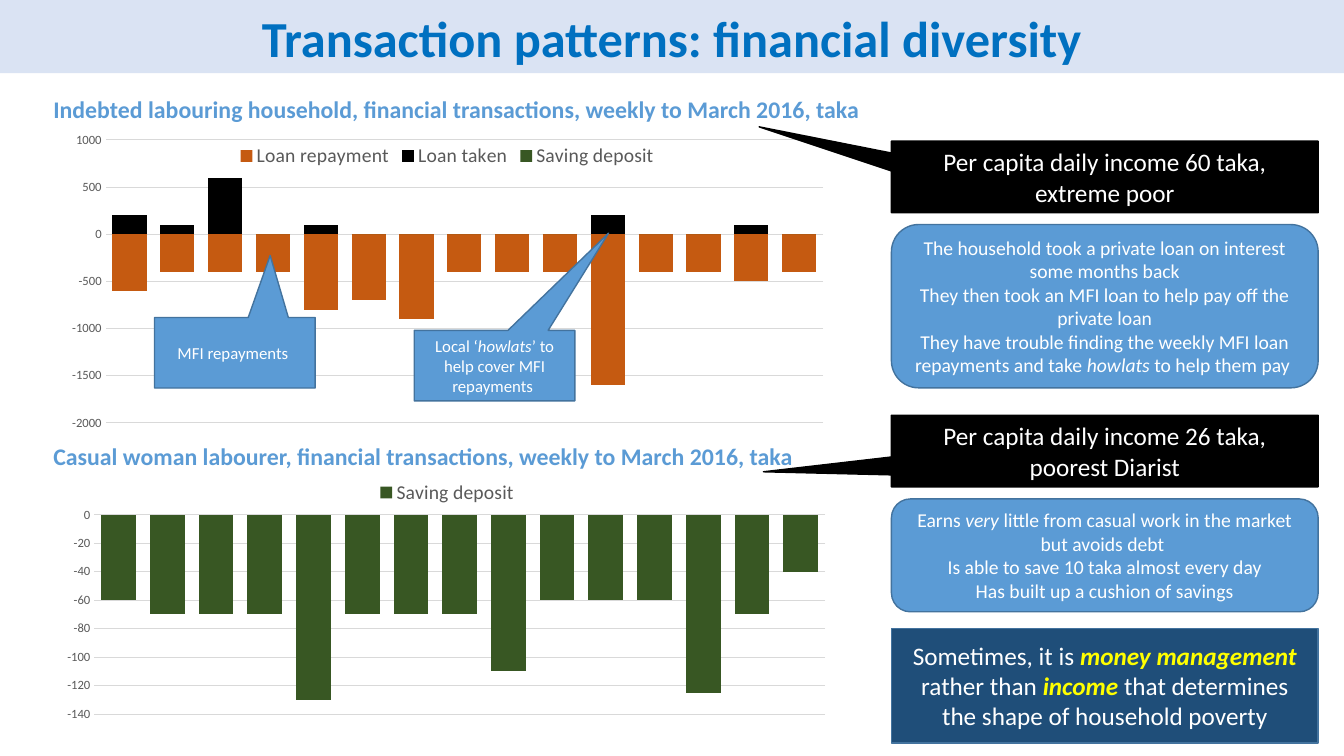
from dataclasses import dataclass
from typing import Optional

from pptx import Presentation
from pptx.chart.chart import Chart
from pptx.chart.data import CategoryChartData
from pptx.dml.color import RGBColor
from pptx.enum.chart import XL_CHART_TYPE, XL_LEGEND_POSITION, XL_TICK_MARK
from pptx.enum.shapes import MSO_SHAPE
from pptx.enum.text import MSO_ANCHOR, PP_ALIGN
from pptx.oxml import parse_xml
from pptx.oxml.ns import nsdecls
from pptx.slide import Slide
from pptx.text.text import TextFrame
from pptx.util import Inches, Pt

WIDE, HIGH = Inches(13.33), Inches(7.5)
COL, ROW = WIDE / 100, HIGH / 100


@dataclass(frozen=True)
class Theme:
    font: str = "Calibri"
    band: str = "DAE3F3"
    title: str = "0070C0"
    blue: str = "5B9BD5"
    edge: str = "43739E"
    navy: str = "1F4E79"
    black: str = "000000"
    white: str = "FFFFFF"
    mark: str = "FFFF00"
    grey: str = "595959"
    grid: str = "D9D9D9"
    rust: str = "C55A11"
    green: str = "385723"
    huge: int = 36
    large: int = 18
    head: int = 17
    body: int = 14
    small: int = 12
    axis: int = 9


THEME = Theme()


@dataclass(frozen=True)
class Area:
    col: float
    row: float
    cols: float
    rows: float

    def place(self) -> tuple[int, int, int, int]:
        return (round(self.col * COL), round(self.row * ROW),
                round(self.cols * COL), round(self.rows * ROW))


@dataclass(frozen=True)
class Box:
    area: Area
    text: str
    size: int
    kind: MSO_SHAPE = MSO_SHAPE.RECTANGLE
    fill: str = THEME.blue
    edge: Optional[str] = THEME.edge
    tip: tuple[float, ...] = ()
    mark: Optional[str] = None


@dataclass(frozen=True)
class Series:
    name: str
    color: str
    values: tuple[Optional[int], ...]


@dataclass(frozen=True)
class Graph:
    area: Area
    plot: tuple[float, float, float, float]
    low: int
    high: int
    step: int
    series: tuple[Series, ...]


def paint(color: str) -> RGBColor:
    return RGBColor.from_string(color)


def write(frame: TextFrame, text: str, *, size: int, color: str,
          bold: bool = False, align: PP_ALIGN = PP_ALIGN.CENTER,
          anchor: MSO_ANCHOR = MSO_ANCHOR.MIDDLE,
          space: Optional[float] = None, mark: Optional[str] = None) -> None:
    frame.word_wrap = True
    frame.vertical_anchor = anchor
    for index, line in enumerate(text.split("\n")):
        para = frame.paragraphs[0] if index == 0 else frame.add_paragraph()
        para.alignment = align
        if space:
            para.line_spacing = space
        for order, part in enumerate(line.split("*")):
            if not part:
                continue
            stress = order % 2 == 1
            run = para.add_run()
            run.text = part
            font = run.font
            font.name = THEME.font
            font.size = Pt(size)
            font.italic = stress
            font.bold = bold or (stress and mark is not None)
            font.color.rgb = paint(mark if stress and mark else color)


def draw_box(slide: Slide, box: Box) -> TextFrame:
    shape = slide.shapes.add_shape(box.kind, *box.area.place())
    shape.shadow.inherit = False
    shape.fill.solid()
    shape.fill.fore_color.rgb = paint(box.fill)
    if box.edge:
        shape.line.color.rgb = paint(box.edge)
        shape.line.width = Pt(1)
    else:
        shape.line.fill.background()
    for index, value in enumerate(box.tip):
        shape.adjustments[index] = value
    return shape.text_frame


def set_plot(chart: Chart, plot: tuple[float, float, float, float]) -> None:
    area = chart.plots[0]._element.getparent()
    for old in area.xpath("c:layout"):
        area.remove(old)
    modes = '<c:xMode val="edge"/><c:yMode val="edge"/>'
    sides = "".join(f'<c:{key} val="{share / 100:.4f}"/>' for key, share in zip("xywh", plot))
    area.insert(0, parse_xml(
        f'<c:layout {nsdecls("c")}><c:manualLayout><c:layoutTarget val="inner"/>'
        f'{modes}{sides}</c:manualLayout></c:layout>'))


def draw_graph(slide: Slide, graph: Graph) -> None:
    data = CategoryChartData()
    data.categories = [str(week) for week in range(1, 16)]
    for series in graph.series:
        data.add_series(series.name, series.values)
    chart = slide.shapes.add_chart(
        XL_CHART_TYPE.COLUMN_STACKED, *graph.area.place(), data).chart
    chart.has_title = False
    chart.font.name = THEME.font
    set_plot(chart, graph.plot)
    bars = chart.plots[0]
    bars.gap_width, bars.overlap, bars.vary_by_categories = 40, 100, False
    for bar, series in zip(bars.series, graph.series):
        bar.invert_if_negative = False
        bar.format.fill.solid()
        bar.format.fill.fore_color.rgb = paint(series.color)
    chart.category_axis.visible = False
    axis = chart.value_axis
    axis.minimum_scale, axis.maximum_scale = graph.low, graph.high
    axis.major_unit = graph.step
    axis.major_tick_mark = axis.minor_tick_mark = XL_TICK_MARK.NONE
    axis.format.line.fill.background()
    grid = axis.major_gridlines.format.line
    grid.color.rgb = paint(THEME.grid)
    grid.width = Pt(0.75)
    chart.has_legend = True
    chart.legend.position = XL_LEGEND_POSITION.TOP
    chart.legend.include_in_layout = False
    for font, size in ((axis.tick_labels.font, THEME.axis),
                       (chart.legend.font, THEME.body)):
        font.name = THEME.font
        font.size = Pt(size)
        font.color.rgb = paint(THEME.grey)


def side(row: float, rows: float) -> Area:
    return Area(66.33, row, 31.75, rows)


def income(row: float, text: str, tip: tuple[float, float]) -> Box:
    return Box(side(row, 9.47), text, THEME.large, MSO_SHAPE.RECTANGULAR_CALLOUT,
               THEME.black, THEME.black, tip)


def story(row: float, rows: float, text: str) -> Box:
    return Box(side(row, rows), text, THEME.body, MSO_SHAPE.FLOWCHART_ALTERNATE_PROCESS)


def note(col: float, row: float, text: str, tip: tuple[float, float]) -> Box:
    return Box(Area(col, row, 11.95, 9.33), text, THEME.small,
               MSO_SHAPE.RECTANGULAR_CALLOUT, tip=tip)


TITLE = Box(Area(0, 0, 100, 9.67), "Transaction patterns: financial diversity",
            THEME.huge, fill=THEME.band, edge=None)
HEADS = (
    (11.87, "Indebted labouring household, financial transactions, weekly to March 2016, taka"),
    (57.8, "Casual woman labourer, financial transactions, weekly to March 2016, taka"),
)
GRAPHS = (
    Graph(Area(4.13, 17.52, 58.28, 40), (6.4, 2.5, 91.6, 93.6), -2000, 1000, 500, (
        Series("Loan repayment", THEME.rust, (-600, -400, -400, -400, -800, -700, -900, -400,
                                              -400, -400, -1600, -400, -400, -500, -400)),
        Series("Loan taken", THEME.black, (200, 100, 600, None, 100, None, None, None,
                                           None, None, 200, None, None, 100, None)),
        Series("Saving deposit", THEME.green, (0,) * 15))),
    Graph(Area(4.13, 62.05, 58.28, 36.27), (4.95, 16.7, 93.3, 72.7), -140, 0, 20, (
        Series("Saving deposit", THEME.green, (-60, -70, -70, -70, -130, -70, -70, -70,
                                               -110, -60, -60, -60, -125, -70, -40)),)),
)
BOXES = (
    note(30.83, 43.7, "Local ‘*howlats*’ to help cover MFI repayments ", (0.71, -1.88)),
    note(11.5, 42, "MFI repayments ", (0.22, -1.38)),
    story(29.7, 21.6, "The household took a private loan on interest some months back\n"
          "They then took an MFI loan to help pay off the private loan\n"
          "They have trouble finding the weekly MFI loan repayments and take "
          "*howlats* to help them pay "),
    income(18.67, "Per capita daily income 60 taka, extreme poor", (-0.81, -0.7)),
    income(54.93, "Per capita daily income 26 taka, poorest Diarist", (-0.8, 0.29)),
    story(66, 14.93, "Earns *very* little from casual work in the market but avoids debt \n"
          "Is able to save 10 taka almost every day\nHas built up a cushion of savings"),
    Box(side(83.1, 15.2), "Sometimes, it is *money management *rather than *income* "
        "that determines the shape of household poverty", THEME.large,
        MSO_SHAPE.FLOWCHART_PROCESS, THEME.navy, mark=THEME.mark),
)


def main() -> None:
    deck = Presentation()
    deck.slide_width, deck.slide_height = WIDE, HIGH
    slide = deck.slides.add_slide(deck.slide_layouts[6])
    write(draw_box(slide, TITLE), TITLE.text, size=TITLE.size, color=THEME.title,
          bold=True, anchor=MSO_ANCHOR.BOTTOM, space=0.9)
    for row, text in HEADS:
        frame = slide.shapes.add_textbox(*Area(3.23, row, 62, 5.2).place()).text_frame
        write(frame, text, size=THEME.head, color=THEME.blue, bold=True,
              align=PP_ALIGN.LEFT, anchor=MSO_ANCHOR.TOP)
    for graph in GRAPHS:
        draw_graph(slide, graph)
    for box in BOXES:
        write(draw_box(slide, box), box.text, size=box.size, color=THEME.white, mark=box.mark)
    deck.save("out.pptx")


if __name__ == "__main__":
    main()
